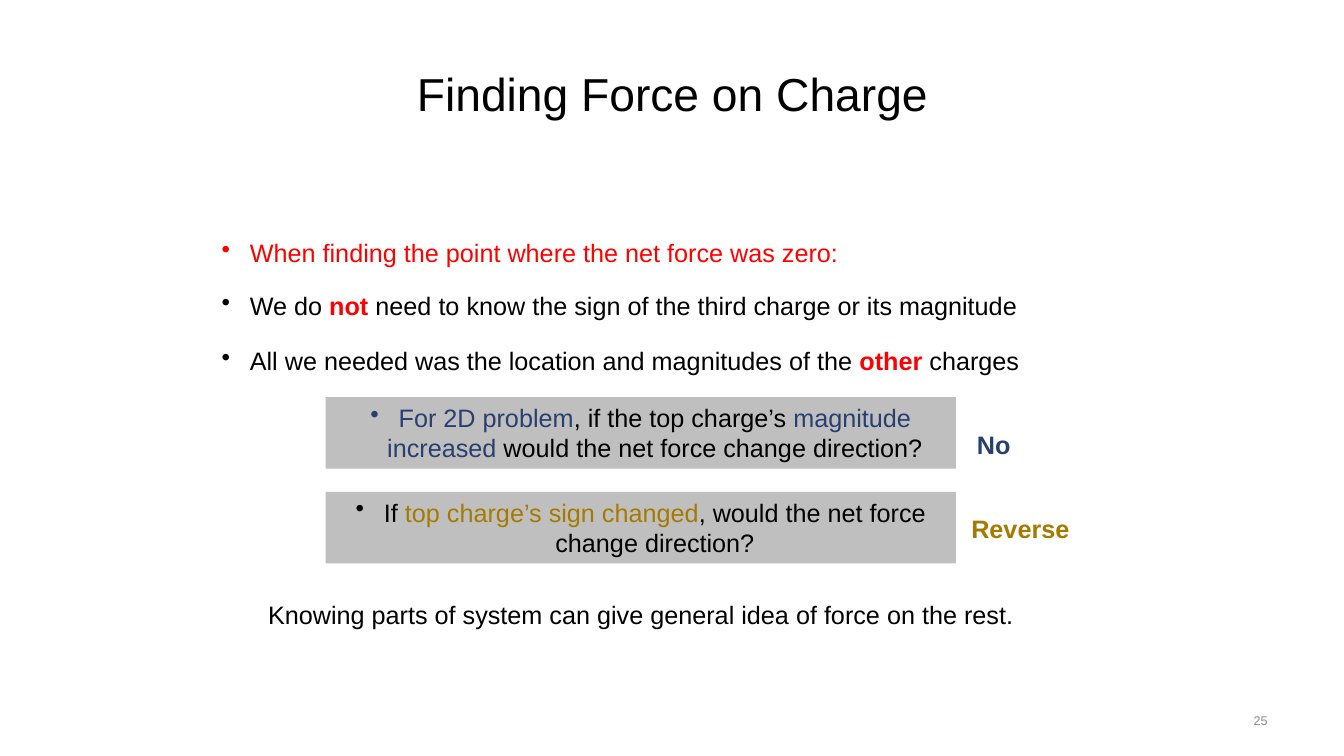
import pptx
import pptx.util
import pptx.dml.color
import pptx.enum.shapes
import pptx.enum.text
import pptx.oxml

PX = pptx.util.Inches(1) // 100
FONT = "Arial"
COLORS = {
    "black": "000000",
    "red": "FF0000",
    "navy": "293F6F",
    "gold": "A67A00",
    "panel": "BFBFBF",
    "number": "8C8C8C",
}
ALIGN = pptx.enum.text.PP_ALIGN
MIDDLE = pptx.enum.text.MSO_ANCHOR.MIDDLE
LINE_HEIGHT = 40


def color(name):
    return pptx.dml.color.RGBColor.from_string(COLORS[name])


def place(shape, box):
    shape.left, shape.top, shape.width, shape.height = (length * PX for length in box)


def add_bullet(paragraph):
    properties = paragraph._p.get_or_add_pPr()
    properties.set("marL", str(28 * PX))
    properties.set("indent", str(-28 * PX))
    bullet = pptx.oxml.parse_xml(
        '<a:buChar xmlns:a="http://schemas.openxmlformats.org/drawingml/2006/main" char="•"/>'
    )
    properties.append(bullet)


def write(shape, runs, align=ALIGN.CENTER, size=18, bold=False, bullet=False):
    shape.text_frame.word_wrap = True
    paragraph = shape.text_frame.paragraphs[0]
    paragraph.alignment = align
    if bullet:
        add_bullet(paragraph)
    paragraph.font.name = FONT
    paragraph.font.size = pptx.util.Pt(size)
    for text, color_name in runs:
        run = paragraph.add_run()
        run.text = text
        run.font.color.rgb = color(color_name)
        run.font.bold = bold or (bullet and text in ("not ", "other "))


def add_text(slide, box, runs, **style):
    shape = slide.shapes.add_textbox(*(length * PX for length in box))
    write(shape, runs, **style)
    return shape


def add_title(slide, box):
    title = slide.shapes.title
    place(title, box)
    title.text_frame.vertical_anchor = MIDDLE
    write(title, [("Finding Force on Charge", "black")], size=33)


def add_points(slide, box):
    left, top, width = box
    points = [
        (0, [("When finding the point where the net force was zero:", "red")]),
        (52, [
            ("We do ", "black"),
            ("not ", "red"),
            ("need to know the sign of the third charge or its magnitude", "black"),
        ]),
        (107, [
            ("All we needed was the location and magnitudes of the ", "black"),
            ("other ", "red"),
            ("charges", "black"),
        ]),
    ]
    for offset, runs in points:
        point_box = (left, top + offset, width, LINE_HEIGHT)
        add_text(slide, point_box, runs, align=ALIGN.LEFT, bullet=True)


def add_question(slide, box, runs, answer, answer_color, answer_width, answer_offset):
    left, top, width, height = box
    panel = slide.shapes.add_shape(
        pptx.enum.shapes.MSO_SHAPE.RECTANGLE, *(length * PX for length in box)
    )
    panel.shadow.inherit = False
    panel.fill.solid()
    panel.fill.fore_color.rgb = color("panel")
    panel.line.fill.background()
    panel.text_frame.vertical_anchor = pptx.enum.text.MSO_ANCHOR.TOP
    write(panel, runs, bullet=True)
    answer_box = (left + width, top + answer_offset, answer_width, LINE_HEIGHT)
    add_text(slide, answer_box, [(answer, answer_color)], bold=True)


def add_questions(slide, box):
    left, top, width = box
    height, step = 71, 94
    questions = [
        ([
            ("For 2D problem", "navy"),
            (", if the top charge’s ", "black"),
            ("magnitude increased", "navy"),
            (" would the net force change direction?", "black"),
        ], "No", "navy", 75, 27),
        ([
            ("If ", "black"),
            ("top charge’s sign changed", "gold"),
            (", would the net force change direction?", "black"),
        ], "Reverse", "gold", 128, 16),
    ]
    for index, question in enumerate(questions):
        add_question(slide, (left, top + index * step, width, height), *question)


def add_conclusion(slide, box):
    text = "Knowing parts of system can give general idea of force on the rest."
    add_text(slide, box, [(text, "black")])


def add_slide_number(slide, box):
    number = add_text(slide, box, [("25", "number")], align=ALIGN.RIGHT, size=9)
    number.text_frame.vertical_anchor = MIDDLE


def main():
    presentation = pptx.Presentation()
    presentation.slide_width = 1333 * PX
    presentation.slide_height = 750 * PX
    slide = presentation.slides.add_slide(presentation.slide_layouts[5])
    add_title(slide, (67, 30, 1200, 125))
    add_points(slide, (210, 231, 844))
    add_questions(slide, (323, 394, 625))
    add_conclusion(slide, (251, 590, 769, LINE_HEIGHT))
    add_slide_number(slide, (956, 695, 311, LINE_HEIGHT))
    presentation.save("out.pptx")


if __name__ == "__main__":
    main()
